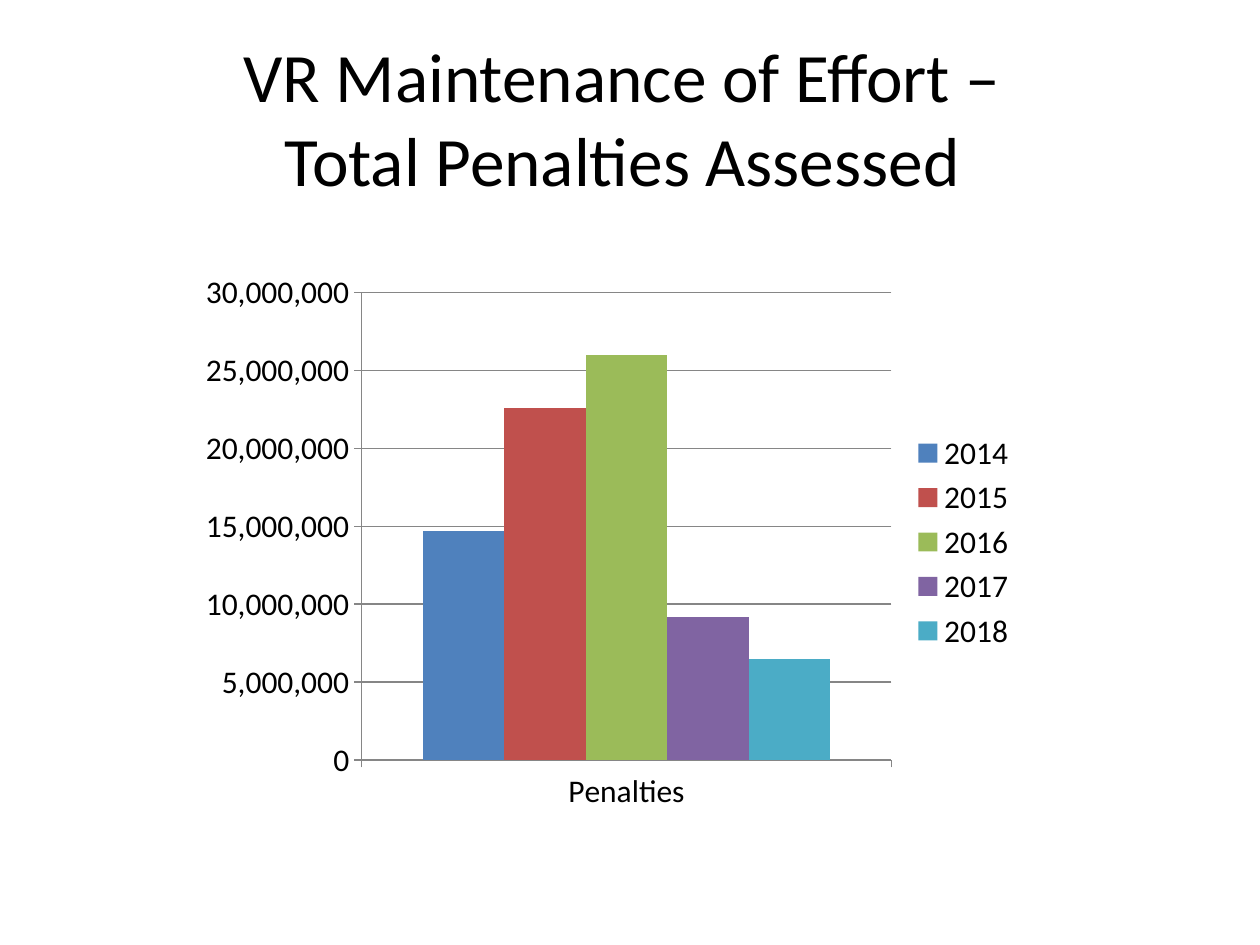
from dataclasses import dataclass

from pptx import Presentation
from pptx.chart.data import CategoryChartData
from pptx.dml.color import RGBColor
from pptx.enum.chart import XL_CHART_TYPE, XL_LEGEND_POSITION, XL_TICK_MARK
from pptx.enum.text import MSO_ANCHOR, MSO_AUTO_SIZE, PP_ALIGN
from pptx.util import Pt

PX = 9525


@dataclass(frozen=True)
class Theme:
    font: str = "Calibri"
    ink: str = "000000"
    rule: str = "868686"
    title_size: float = 39.6
    chart_size: int = 18


theme = Theme()

penalties_by_year = {
    "2014": (14700000, "4F81BD"),
    "2015": (22600000, "C0504D"),
    "2016": (26000000, "9BBB59"),
    "2017": (9200000, "8064A2"),
    "2018": (6500000, "4BACC6"),
}


def write(frame, text, *, size, color, font, align, anchor):
    frame.text = text
    frame.word_wrap = True
    frame.auto_size = MSO_AUTO_SIZE.NONE
    frame.vertical_anchor = anchor
    for paragraph in frame.paragraphs:
        paragraph.alignment = align
        for run in paragraph.runs:
            run.font.size = Pt(size)
            run.font.name = font
            run.font.color.rgb = RGBColor.from_string(color)


deck = Presentation()
deck.slide_width, deck.slide_height = 960 * PX, 720 * PX
slide = deck.slides.add_slide(deck.slide_layouts[5])

heading = slide.shapes.title
heading.left, heading.top, heading.width, heading.height = (
    n * PX for n in (48, 29, 864, 120)
)
write(
    heading.text_frame,
    "VR Maintenance of Effort – \vTotal Penalties Assessed ",
    size=theme.title_size,
    color=theme.ink,
    font=theme.font,
    align=PP_ALIGN.CENTER,
    anchor=MSO_ANCHOR.MIDDLE,
)

penalty_data = CategoryChartData(number_format="#,##0")
penalty_data.categories = ["Penalties"]
for year, (amount, _) in penalties_by_year.items():
    penalty_data.add_series(year, [amount])

penalties = slide.shapes.add_chart(
    XL_CHART_TYPE.COLUMN_CLUSTERED,
    *(n * PX for n in (144, 200, 640, 426)),
    penalty_data,
).chart
penalties.has_title = False
penalties.font.name = theme.font
penalties.font.size = Pt(theme.chart_size)
penalties.font.color.rgb = RGBColor.from_string(theme.ink)

penalties.has_legend = True
penalties.legend.position = XL_LEGEND_POSITION.RIGHT
penalties.legend.include_in_layout = False

columns = penalties.plots[0]
columns.gap_width = 150
columns.overlap = 0
columns.vary_by_categories = False
for year_columns, (_, color) in zip(columns.series, penalties_by_year.values()):
    year_columns.format.fill.solid()
    year_columns.format.fill.fore_color.rgb = RGBColor.from_string(color)

amounts = penalties.value_axis
amounts.minimum_scale = 0
amounts.maximum_scale = 30000000
amounts.major_unit = 5000000
amounts.has_major_gridlines = True
amounts.tick_labels.number_format = "#,##0"
amounts.tick_labels.number_format_is_linked = False
for axis in (amounts, penalties.category_axis):
    axis.major_tick_mark = XL_TICK_MARK.OUTSIDE
    axis.minor_tick_mark = XL_TICK_MARK.NONE
for rule in (amounts, penalties.category_axis, amounts.major_gridlines):
    rule.format.line.color.rgb = RGBColor.from_string(theme.rule)
    rule.format.line.width = Pt(0.75)

deck.save("out.pptx")
